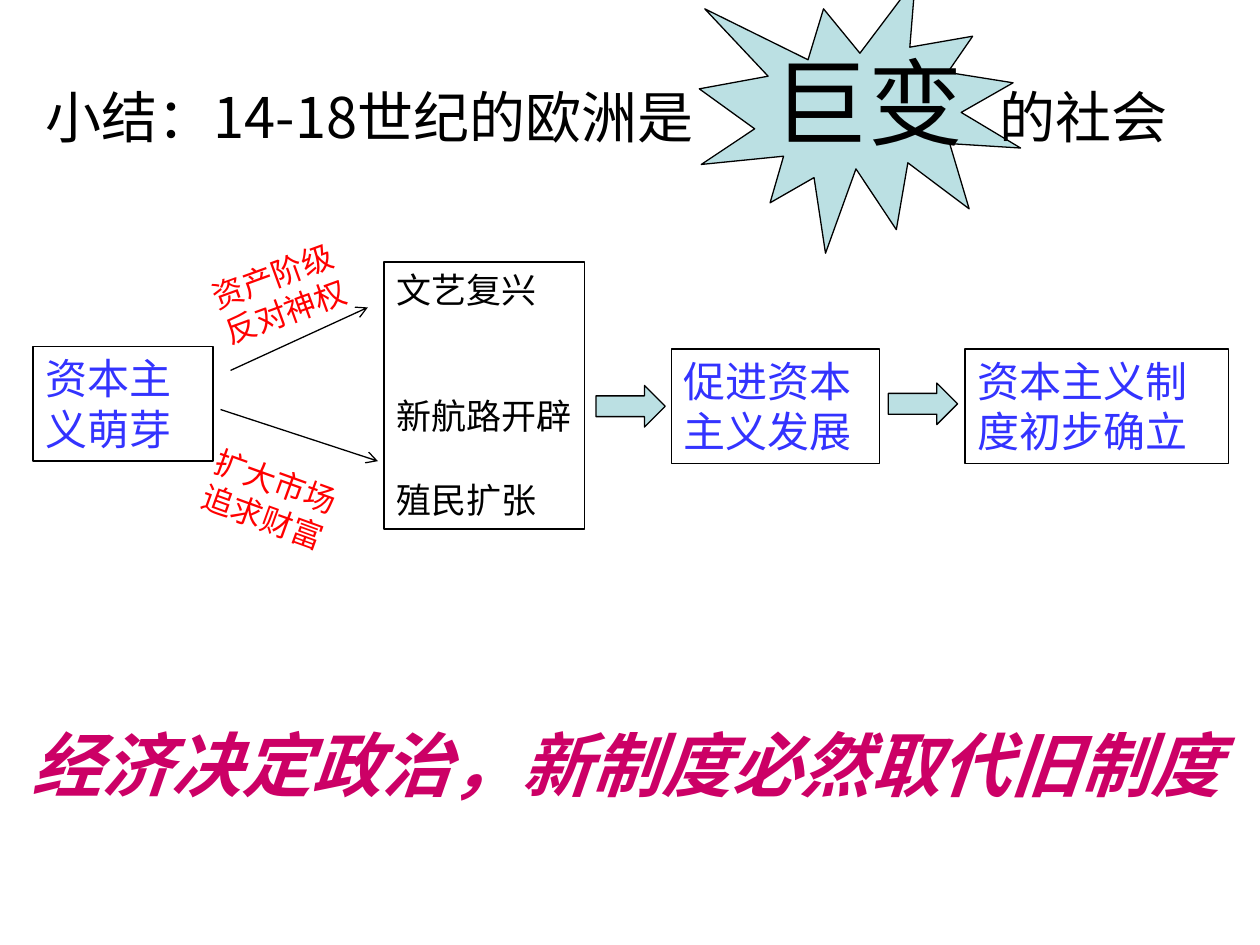
from typing import NamedTuple, Optional

from lxml import etree
from pptx import Presentation
from pptx.dml.color import RGBColor
from pptx.enum.shapes import MSO_CONNECTOR, MSO_SHAPE
from pptx.enum.text import MSO_ANCHOR, MSO_AUTO_SIZE, PP_ALIGN
from pptx.oxml.ns import qn
from pptx.util import Inches, Pt

RECT, SEAL, ARROW = MSO_SHAPE.RECTANGLE, MSO_SHAPE.EXPLOSION1, MSO_SHAPE.RIGHT_ARROW
STRAIGHT = MSO_CONNECTOR.STRAIGHT
LEFT, CENTER = PP_ALIGN.LEFT, PP_ALIGN.CENTER
TOP, GROW = MSO_ANCHOR.TOP, MSO_AUTO_SIZE.SHAPE_TO_FIT_TEXT

BLACK = RGBColor(0x00, 0x00, 0x00)
BLUE = RGBColor(0x33, 0x33, 0xFF)
RED = RGBColor(0xFF, 0x00, 0x00)
MAGENTA = RGBColor(0xCC, 0x00, 0x66)
PALE_TEAL = RGBColor(0xBB, 0xE0, 0xE3)


class Area(NamedTuple):
    left: float
    top: float
    width: float
    height: float

    def lengths(self) -> list:
        return [Inches(v) for v in self]


class Label(NamedTuple):
    area: Area
    lines: list[str]
    size: int
    color: RGBColor
    framed: bool = False
    align: PP_ALIGN = LEFT
    rotation: float = 0
    emphasis: bool = False
    gaps: tuple = ()  # points before each line


class Arrow(NamedTuple):
    start: tuple[float, float]
    end: tuple[float, float]


def add_preset(s, kind: MSO_SHAPE, area: Area, fill: Optional[RGBColor], weight: float):
    sp = s.shapes.add_shape(kind, *area.lengths())
    sp.shadow.inherit = False
    if fill is None:
        sp.fill.background()
    else:
        sp.fill.solid()
        sp.fill.fore_color.rgb = fill
    sp.line.color.rgb = BLACK
    sp.line.width = Pt(weight)
    return sp


def add_label(s, label: Label) -> None:
    if label.framed:
        sp = add_preset(s, RECT, label.area, None, 1)
    else:
        sp = s.shapes.add_textbox(*label.area.lengths())
    sp.rotation = label.rotation
    tf = sp.text_frame
    tf.word_wrap, tf.auto_size, tf.vertical_anchor = True, GROW, TOP
    tf.text = "\n".join(label.lines)
    for p in tf.paragraphs:
        p.alignment = label.align
        p.font.name, p.font.size = "Arial", Pt(label.size)
        p.font.color.rgb = label.color
        if label.emphasis:
            p.font.bold = p.font.italic = True
    for p, gap in zip(tf.paragraphs, label.gaps):
        p.space_before = Pt(gap)


def add_arrow(s, arrow: Arrow) -> None:
    ends = [Inches(v) for v in arrow.start + arrow.end]
    line = s.shapes.add_connector(STRAIGHT, *ends)
    line.line.color.rgb = BLACK
    line.line.width = Pt(0.75)
    etree.SubElement(line.line._get_or_add_ln(), qn("a:tailEnd"), type="arrow")
    etree.SubElement(line._element.spPr, qn("a:effectLst"))


def add_title(s, area: Area, parts: list[tuple[str, int]], tabs: list[float]) -> None:
    tf = s.shapes.add_textbox(*area.lengths()).text_frame
    tf.word_wrap, tf.auto_size = True, GROW
    tf.margin_left = Inches(0.24)
    p = tf.paragraphs[0]
    p.alignment = LEFT
    p.font.name = "Noto Sans CJK SC"
    p.font.color.rgb = BLACK
    for text, size in parts:
        r = p.add_run()
        r.text, r.font.size = text, Pt(size)
    # Tab stops place the enlarged word and the ending
    tab_list = etree.Element(qn("a:tabLst"))
    for pos in tabs:
        etree.SubElement(tab_list, qn("a:tab"), pos=str(Inches(pos)), algn="l")
    p._p.get_or_add_pPr().find(qn("a:defRPr")).addprevious(tab_list)


BOXES = [
    Label(Area(3.05, 2.08, 1.59, 2.12), ["文艺复兴", "新航路开辟", "殖民扩张"],
          20, BLACK, framed=True, gaps=(0, 48, 24)),
    Label(Area(0.26, 2.75, 1.43, 0.91), ["资本主义萌芽"], 24, BLUE, framed=True),
    Label(Area(5.33, 2.77, 1.65, 0.91), ["促进资本主义发展"], 24, BLUE, framed=True),
    Label(Area(7.66, 2.77, 2.09, 0.91), ["资本主义制度初步确立"], 24, BLUE, framed=True),
]
CAUSES = [
    Label(Area(1.51, 1.98, 1.41, 0.71), ["资产阶级反对神权"], 18, RED,
          align=CENTER, rotation=340),
    Label(Area(1.43, 3.61, 1.41, 0.71), ["扩大市场", "追求财富"], 18, RED,
          align=CENTER, rotation=20),
]
CONCLUSION = Label(Area(0.12, 5.68, 9.7, 0.77), ["经济决定政治，新制度必然取代旧制度"],
                   40, MAGENTA, align=CENTER, emphasis=True)
BRANCHES = [Arrow((1.83, 2.94), (2.92, 2.44)), Arrow((1.75, 3.25), (3, 3.66))]
BLOCK_ARROWS = [Area(4.73, 3.06, 0.55, 0.33), Area(7.05, 3.04, 0.55, 0.33)]
TITLE = [("小结：14-18世纪的欧洲是\t", 32), ("巨变\t", 54), ("的社会", 32)]


def main() -> None:
    prs = Presentation()
    prs.slide_width, prs.slide_height = Inches(10), Inches(7.5)
    s = prs.slides.add_slide(prs.slide_layouts[6])

    # Starburst behind the title
    add_preset(s, SEAL, Area(5.55, -0.16, 2.55, 2.17), PALE_TEAL, 0.75)

    # Flow from cause to result
    for box in BOXES:
        add_label(s, box)
    for branch in BRANCHES:
        add_arrow(s, branch)
    for cause in CAUSES:
        add_label(s, cause)
    for area in BLOCK_ARROWS:
        add_preset(s, ARROW, area, PALE_TEAL, 0.75)

    # Conclusion and title
    add_label(s, CONCLUSION)
    add_title(s, Area(0.12, 0.3, 9.43, 1.01), TITLE, [5.78, 7.57])

    prs.save("out.pptx")


if __name__ == "__main__":
    main()
